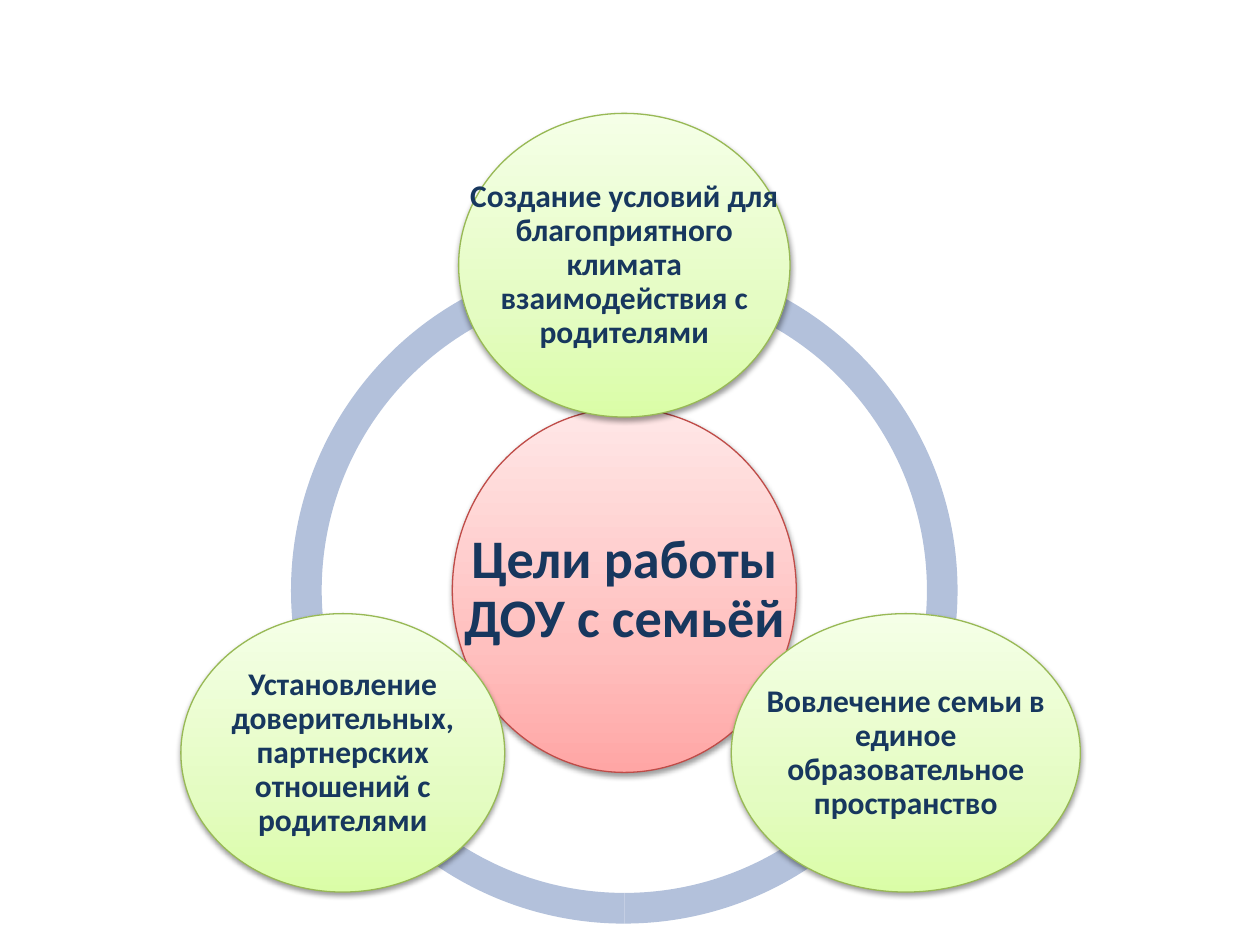
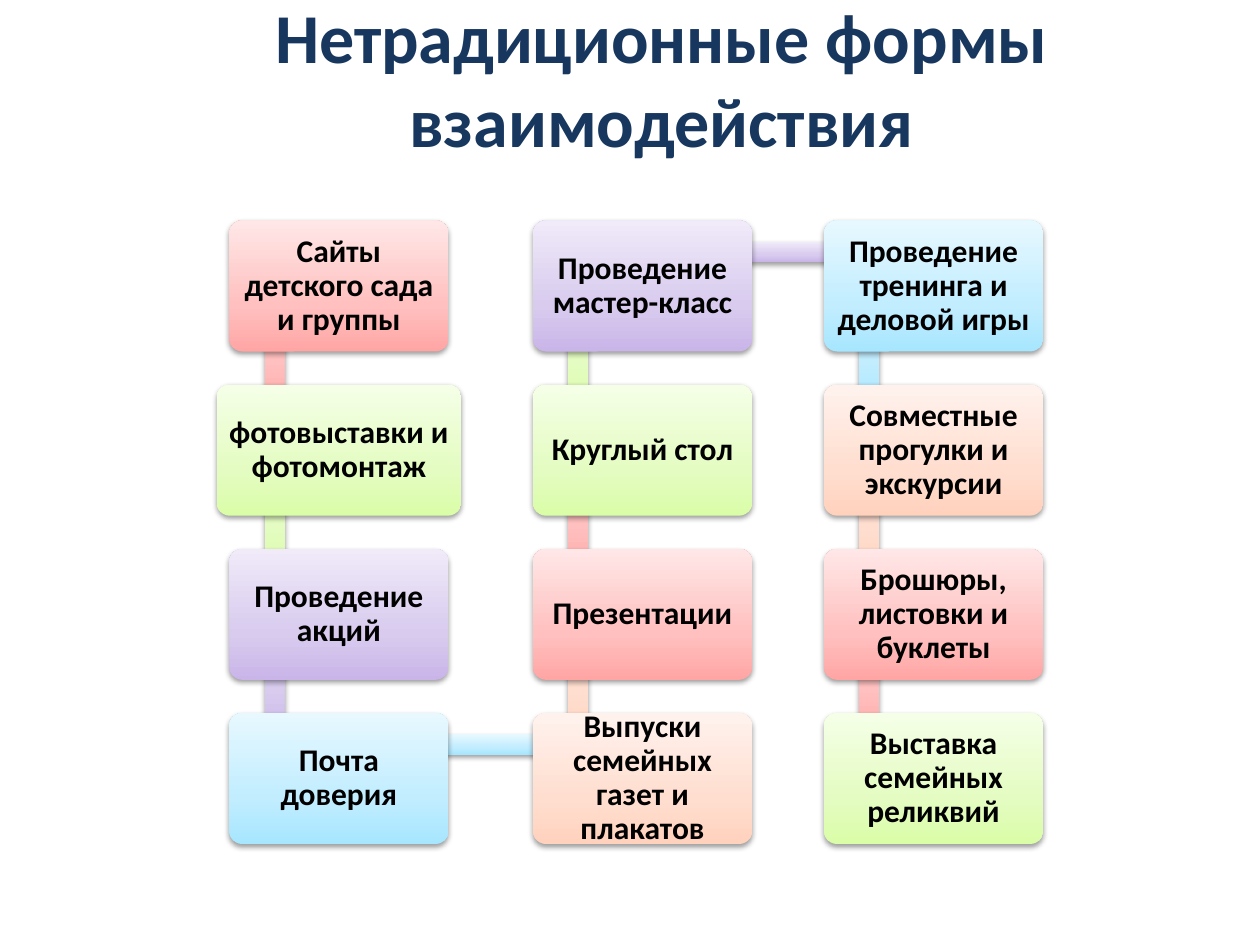
import copy
import itertools
import math

import pptx
import pptx.dml.color
import pptx.enum.shapes
import pptx.enum.text
import pptx.oxml
import pptx.oxml.ns
import pptx.util

SHAPE = pptx.enum.shapes.MSO_SHAPE
UNIT = pptx.util.Inches(10) // 100
FONT = "Calibri"
NAVY, BLACK, RING, GREEN_EDGE, RED_EDGE = "17375E", "000000", "B3C1DB", "98B955", "BF4C48"
RED = ("FFA6A5", "FFC0BF", "FFE7E7")
GREEN = ("DAFDA7", "E4FCC2", "F5FFE7")
VIOLET = ("C9B5E8", "D8CBEE", "F0EAF9")
BLUE = ("A7E6FF", "C1EDFF", "E7F8FF")
ORANGE = ("FFD2BD", "FFDED0", "FFF2ED")
STOPS = (0, 0.35, 1)
SHADOW = (
    '<a:effectLst %s><a:outerShdw blurRad="39370" dist="20320" dir="5400000" rotWithShape="0">'
    '<a:srgbClr val="000000"><a:alpha val="38000"/></a:srgbClr></a:outerShdw></a:effectLst>'
    % pptx.oxml.ns.nsdecls("a")
)

GOALS = [
    ("Создание условий для благоприятного климата взаимодействия с родителями", 26.3, 24.1),
    ("Вовлечение семьи в единое образовательное пространство", 27.7, 22.1),
    ("Установление доверительных, партнерских отношений с родителями", 25.7, 22.1),
]
FORMS = [
    "Сайты детского сада и группы",
    "фотовыставки и фотомонтаж",
    "Проведение акций",
    "Почта доверия",
    "Выпуски семейных газет и плакатов",
    "Презентации",
    "Круглый стол",
    "Проведение мастер-класс",
    "Проведение тренинга и деловой игры",
    "Совместные прогулки и экскурсии",
    "Брошюры, листовки и буклеты",
    "Выставка семейных реликвий",
]
WIDE_FORM = 1


def rgb(value):
    """Turn a hex string into a colour."""
    return pptx.dml.color.RGBColor.from_string(value)


def place(x, y, w, h):
    """Turn grid units into slide lengths."""
    return [round(v * UNIT) for v in (x, y, w, h)]


def write(tf, text, size=18, color=BLACK, inset=0.4, spacing=0.9):
    """Write one bold centred paragraph into a text frame."""
    tf.word_wrap = True
    tf.auto_size = pptx.enum.text.MSO_AUTO_SIZE.NONE
    tf.vertical_anchor = pptx.enum.text.MSO_ANCHOR.MIDDLE
    tf.margin_left = tf.margin_right = tf.margin_top = tf.margin_bottom = round(inset * UNIT)
    p = tf.paragraphs[0]
    p.alignment = pptx.enum.text.PP_ALIGN.CENTER
    p.line_spacing = spacing
    r = p.add_run()
    r.text = text
    r.font.name, r.font.size, r.font.bold = FONT, pptx.util.Pt(size), True
    r.font.color.rgb = rgb(color)


def add_glossy(s, kind, box, shades, edge=None):
    """Add a shape with a vertical gradient and a soft shadow."""
    sp = s.shapes.add_shape(kind, *place(*box))
    sp.fill.gradient()
    sp.fill.gradient_angle = 90
    gs = sp._element.spPr.find(".//" + pptx.oxml.ns.qn("a:gs"))
    gs.addnext(copy.deepcopy(gs))
    for stop, position, shade in zip(sp.fill.gradient_stops, STOPS, shades):
        stop.position = position
        stop.color.rgb = rgb(shade)
    if edge:
        sp.line.color.rgb = rgb(edge)
        sp.line.width = pptx.util.Pt(0.75)
    else:
        sp.line.fill.background()
    sp._element.spPr.append(pptx.oxml.parse_xml(SHADOW))
    return sp


def add_disc(s, cx, cy, w, h, text, shades, edge, size=18, inset=0.3):
    """Add a disc around a centre with a label as wide as the disc."""
    box = (cx - w / 2, cy - h / 2, w, h)
    add_glossy(s, SHAPE.OVAL, box, shades, edge)
    label = s.shapes.add_textbox(*place(*box))
    write(label.text_frame, text, size, NAVY, inset)


def add_goal_wheel(s, x, y, side):
    """Draw the ring, its hub and the goals that orbit the hub."""
    for start, end in ((90, 162), (18, 90), (162, 18)):
        arc = s.shapes.add_shape(SHAPE.BLOCK_ARC, *place(x, y, side, side))
        for i, value in enumerate((start * 0.6, end * 0.6, 0.046)):
            arc.adjustments[i] = value
        arc.shadow.inherit = False
        arc.fill.solid()
        arc.fill.fore_color.rgb = rgb(RING)
        arc.line.fill.background()
    cx, cy, orbit = x + side / 2, y + side / 2, 25.8
    add_disc(s, cx, cy, 27.3, 28.9, "Цели работы ДОУ с семьёй", RED, RED_EDGE, 31, 0.4)
    for i, (text, w, h) in enumerate(GOALS):
        angle = math.radians(120 * i - 90)
        gx, gy = cx + orbit * math.cos(angle), cy + orbit * math.sin(angle)
        add_disc(s, gx, gy, w, h, text, GREEN, GREEN_EDGE)


def add_form_chain(s, x, y):
    """Draw the cards as a chain that runs down, up and down again."""
    rows, card_w, card_h, extra, gap, step, bar = 4, 17.4, 10.4, 2, 5.7, 13.03, 1.6
    lefts = [x + extra / 2] + [x + extra + i * (card_w + gap) for i in (1, 2)]
    spots = []
    for i in range(len(FORMS)):
        col, row = divmod(i, rows)
        spots.append((lefts[col], y + step * (rows - 1 - row if col % 2 else row)))
    shades = itertools.cycle((RED, GREEN, VIOLET, BLUE, ORANGE))
    for i, (text, (left, top), shade) in enumerate(zip(FORMS, spots, shades)):
        if i + 1 < len(spots):
            next_left, next_top = spots[i + 1]
            if next_left == left:
                link = (left + 2.8, min(top, next_top) + 2.7, bar, step - 0.1)
            else:
                link = (left + 3.6, top + 1.7, next_left - left, bar)
            add_glossy(s, SHAPE.RECTANGLE, link, shade)
        spare = extra if i == WIDE_FORM else 0
        box = (left - spare / 2, top, card_w + spare, card_h)
        card = add_glossy(s, SHAPE.ROUNDED_RECTANGLE, box, shade)
        card.adjustments[0] = 0.1
        write(card.text_frame, text)


def add_title(s, text, box):
    """Move the title placeholder to its box and fill it."""
    title = s.shapes.title
    title.left, title.top, title.width, title.height = place(*box)
    write(title.text_frame, text, size=40, color=NAVY, inset=0.5, spacing=1.0)


def main():
    """Build the two slides."""
    prs = pptx.Presentation()
    prs.slide_width, prs.slide_height = 100 * UNIT, 75 * UNIT
    add_goal_wheel(prs.slides.add_slide(prs.slide_layouts[6]), 23.1, 20.4, 52.9)
    s = prs.slides.add_slide(prs.slide_layouts[5])
    add_title(s, "Нетрадиционные формы взаимодействия", (5, 0, 95, 12.3))
    add_form_chain(s, 17.2, 17.5)
    prs.save("out.pptx")


if __name__ == "__main__":
    main()
